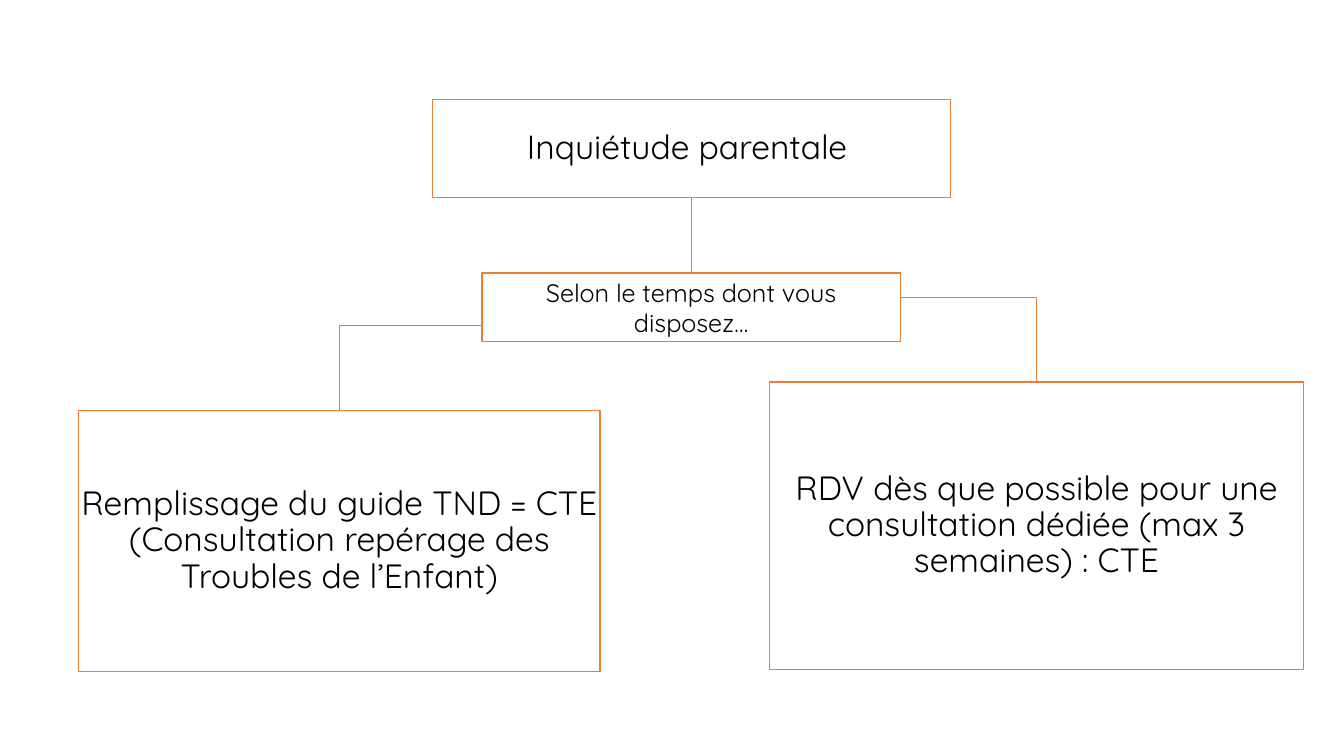
from dataclasses import dataclass

from pptx import Presentation
from pptx.dml.color import RGBColor
from pptx.enum.shapes import MSO_SHAPE
from pptx.enum.text import MSO_ANCHOR, PP_ALIGN
from pptx.util import Inches, Pt

RECTANGLE = MSO_SHAPE.RECTANGLE
MIDDLE = MSO_ANCHOR.MIDDLE
CENTER = PP_ALIGN.CENTER
BLANK_LAYOUT = 6


@dataclass(frozen=True)
class Theme:
    """Colours, font and sizes of the slide."""
    accent: RGBColor = RGBColor(0xED, 0x7D, 0x31)
    paper: RGBColor = RGBColor(0xFF, 0xFF, 0xFF)
    ink: RGBColor = RGBColor(0, 0, 0)
    font: str = "Quicksand"
    step_size: Pt = Pt(24)
    condition_size: Pt = Pt(18)
    line_width: Pt = Pt(1)


THEME = Theme()


def apply_format(target, values):
    """Set each named format value on the target."""
    for name, value in values.items():
        setattr(target, name, value)


def style_outline(shape):
    """Give a shape the accent outline without a shadow."""
    shape.shadow.inherit = False
    shape.line.color.rgb = THEME.accent
    shape.line.width = THEME.line_width


def add_box(slide, bounds, wording, size, margins=(0.02, 0.02), spacing=0.9):
    """Add an outlined box with centred wording."""
    box = slide.shapes.add_shape(RECTANGLE, *map(Inches, bounds))
    style_outline(box)
    box.fill.solid()
    box.fill.fore_color.rgb = THEME.paper
    side, edge = map(Inches, margins)
    apply_format(box.text_frame, {
        "word_wrap": True, "vertical_anchor": MIDDLE,
        "margin_left": side, "margin_right": side,
        "margin_top": edge, "margin_bottom": edge,
    })
    paragraph = box.text_frame.paragraphs[0]
    apply_format(paragraph, {"alignment": CENTER, "line_spacing": spacing})
    run = paragraph.add_run()
    run.text = wording
    apply_format(run.font, {"name": THEME.font, "size": size})
    run.font.color.rgb = THEME.ink
    return box


def add_branch(slide, concern, option, drop):
    """Draw a bent line from the concern down to an option."""
    start_x = concern.left + concern.width // 2
    start_y = concern.top + concern.height
    end_x = option.left + option.width // 2
    turn_y = option.top - Inches(drop)
    builder = slide.shapes.build_freeform(start_x, start_y)
    builder.add_line_segments(
        [(start_x, turn_y), (end_x, turn_y), (end_x, option.top)], close=False)
    branch = builder.convert_to_shape()
    branch.fill.background()
    style_outline(branch)


def main():
    """Build and save the decision slide."""
    deck = Presentation()
    deck.slide_width, deck.slide_height = Inches(13.33), Inches(7.5)
    slide = deck.slides.add_slide(deck.slide_layouts[BLANK_LAYOUT])

    concern = add_box(slide, (4.29, 0.99, 5.14, 0.97),
                      "Inquiétude parentale ", THEME.step_size)
    guide = add_box(
        slide, (0.78, 4.07, 5.17, 2.59),
        "Remplissage du guide TND = CTE (Consultation repérage des "
        "Troubles de l’Enfant)", THEME.step_size)
    appointment = add_box(
        slide, (7.63, 3.79, 5.3, 2.85),
        "RDV dès que possible pour une consultation dédiée "
        "(max 3 semaines) : CTE", THEME.step_size)

    for option in (appointment, guide):
        add_branch(slide, concern, option, drop=0.84)

    add_box(slide, (4.78, 2.71, 4.15, 0.68),
            "Selon le temps dont vous disposez…", THEME.condition_size,
            margins=(0.1, 0.05), spacing=1.0)
    deck.save("out.pptx")


if __name__ == "__main__":
    main()
